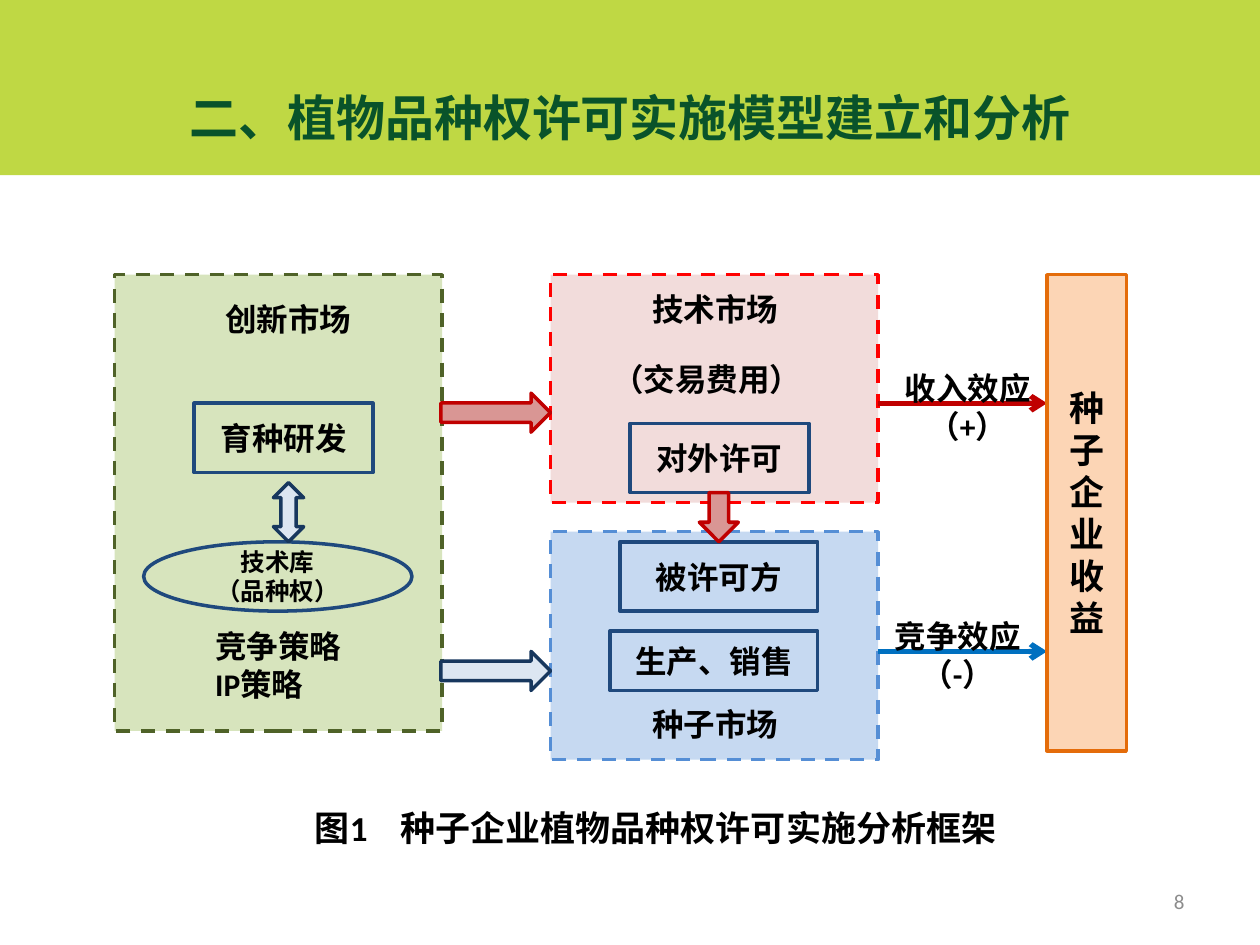
from lxml import etree
from pptx import Presentation
from pptx import util as u
from pptx.dml.color import RGBColor
from pptx.enum import dml, shapes, text
from pptx.oxml import ns

FONT = "Calibri"
LIME = RGBColor(0xBF, 0xD8, 0x44)
TITLE_GREEN = RGBColor(0x09, 0x53, 0x2A)
BLACK = RGBColor(0, 0, 0)
GREY = RGBColor(0x8C, 0x8C, 0x8C)
NAVY = RGBColor(0x1F, 0x49, 0x7D)
RED = RGBColor(0xC0, 0x00, 0x00)
BLUE = RGBColor(0x00, 0x70, 0xC0)
PALE_GREEN, OLIVE = RGBColor(0xD7, 0xE4, 0xBD), RGBColor(0x4F, 0x62, 0x28)
PALE_RED, BRIGHT_RED = RGBColor(0xF2, 0xDC, 0xDB), RGBColor(0xFF, 0, 0)
PALE_BLUE, MID_BLUE = RGBColor(0xC6, 0xD9, 0xF1), RGBColor(0x55, 0x8E, 0xD5)
PEACH, ORANGE = RGBColor(0xFC, 0xD5, 0xB5), RGBColor(0xE4, 0x6C, 0x0A)
ROSE = RGBColor(0xD9, 0x96, 0x94)
ICE, DARK_NAVY = RGBColor(0xDC, 0xE6, 0xF2), RGBColor(0x17, 0x37, 0x5E)

GEOMETRY = shapes.MSO_SHAPE
LEFT, CENTER, RIGHT = text.PP_ALIGN.LEFT, text.PP_ALIGN.CENTER, text.PP_ALIGN.RIGHT
MIDDLE = text.MSO_ANCHOR.MIDDLE

# Shared positions in inches
MARKET_TOP, MARKET_WIDTH = 2.18, 2.6
INNOVATION_LEFT, MARKET_LEFT, INCOME_LEFT = 0.91, 4.37, 8.31
MARKET_RIGHT = MARKET_LEFT + MARKET_WIDTH


def inches(box):
    return [u.Inches(value) for value in box]


def write(frame, lines, size, color=BLACK, bold=True, align=LEFT):
    frame.word_wrap = True
    for index, line in enumerate(lines):
        paragraph = frame.paragraphs[0] if index == 0 else frame.add_paragraph()
        paragraph.alignment = align
        run = paragraph.add_run()
        run.text = line
        run.font.name = FONT
        run.font.size = u.Pt(size)
        run.font.bold = bold
        run.font.color.rgb = color


def add_figure(slide, geometry, box, fill=None, line=None, dashed=False):
    shape = slide.shapes.add_shape(geometry, *inches(box))
    shape.shadow.inherit = False
    if fill is None:
        shape.fill.background()
    else:
        shape.fill.solid()
        shape.fill.fore_color.rgb = fill
    if line is None:
        shape.line.fill.background()
    else:
        shape.line.color.rgb = line
        shape.line.width = u.Pt(2)
    if dashed:
        shape.line.dash_style = dml.MSO_LINE.DASH
    return shape


def add_node(slide, geometry, box, lines, size=18, fill=None, line=NAVY):
    shape = add_figure(slide, geometry, box, fill, line)
    shape.text_frame.vertical_anchor = MIDDLE
    write(shape.text_frame, lines, size, align=CENTER)


def add_label(slide, box, lines, size=18, **style):
    label = slide.shapes.add_textbox(*inches(box))
    write(label.text_frame, lines, size, **style)
    return label


def add_effect_arrow(slide, y, color):
    arrow = slide.shapes.add_connector(
        shapes.MSO_CONNECTOR.STRAIGHT, *inches((MARKET_RIGHT, y, INCOME_LEFT, y)))
    arrow.line.color.rgb = color
    arrow.line.width = u.Pt(3)
    etree.SubElement(arrow.line._get_or_add_ln(), ns.qn("a:tailEnd"), type="arrow")
    etree.SubElement(arrow._element.spPr, ns.qn("a:effectLst"))


def set_title(slide, words):
    title = slide.shapes.title
    title.left, title.top, title.width, title.height = inches((0.5, 0.3, 9, 1.25))
    title.text_frame.vertical_anchor = MIDDLE
    write(title.text_frame, [words], 28, TITLE_GREEN, align=CENTER)
    # The title lies in front of the header band
    slide.shapes._spTree.append(title._element)


def add_caption(slide):
    caption = add_label(slide, (2.4, 6.35, 5.67, 0.44),
                        ["图1\t种子企业植物品种权许可实施分析框架"], 20)
    properties = caption.text_frame.paragraphs[0]._p.get_or_add_pPr()
    tabs = etree.SubElement(properties, ns.qn("a:tabLst"))
    etree.SubElement(tabs, ns.qn("a:tab"), pos=str(u.Inches(0.68)), algn="l")


def main():
    presentation = Presentation()
    presentation.slide_width, presentation.slide_height = u.Inches(10), u.Inches(7.5)
    slide = presentation.slides.add_slide(presentation.slide_layouts[5])

    # Header
    add_figure(slide, GEOMETRY.RECTANGLE, (0, 0, 10, 1.39), LIME)
    set_title(slide, "二、植物品种权许可实施模型建立和分析")

    # Market areas
    for left, top, height, fill, line in (
            (MARKET_LEFT, 4.22, 1.81, PALE_BLUE, MID_BLUE),
            (MARKET_LEFT, MARKET_TOP, 1.81, PALE_RED, BRIGHT_RED),
            (INNOVATION_LEFT, MARKET_TOP, 3.62, PALE_GREEN, OLIVE)):
        add_figure(slide, GEOMETRY.RECTANGLE, (left, top, MARKET_WIDTH, height),
                   fill, line, dashed=True)

    # Activities within the markets
    for box, words in (
            ((1.54, 3.2, 1.42, 0.55), "育种研发"),
            ((5, 3.36, 1.42, 0.55), "对外许可"),
            ((4.92, 4.3, 1.57, 0.55), "被许可方"),
            ((4.84, 5.01, 1.65, 0.47), "生产、销售")):
        add_node(slide, GEOMETRY.RECTANGLE, box, [words])
    add_node(slide, GEOMETRY.OVAL, (1.14, 4.3, 2.13, 0.55), ["技术库", "（品种权）"], 14)

    # Block arrows
    for geometry, box, fill, line in (
            (GEOMETRY.RIGHT_ARROW, (3.5, 5.17, 0.87, 0.31), ICE, DARK_NAVY),
            (GEOMETRY.RIGHT_ARROW, (3.5, 3.12, 0.87, 0.31), ROSE, RED),
            (GEOMETRY.UP_DOWN_ARROW, (2.17, 3.83, 0.24, 0.47), ICE, DARK_NAVY),
            (GEOMETRY.DOWN_ARROW, (5.55, 3.91, 0.31, 0.39), ROSE, RED)):
        add_figure(slide, geometry, box, fill, line)

    # Market labels
    for box, lines in (
            ((1.69, 2.33, 1.34, 0.4), ["创新市场"]),
            ((1.61, 4.93, 1.34, 0.71), ["竞争策略", "IP策略"]),
            ((5.08, 2.25, 1.42, 0.4), ["技术市场"]),
            ((4.76, 2.81, 1.81, 0.4), ["（交易费用）"]),
            ((5.08, 5.55, 1.42, 0.4), ["种子市场"])):
        add_label(slide, box, lines)

    # Effects on company income
    add_effect_arrow(slide, 3.2, RED)
    add_effect_arrow(slide, 5.17, BLUE)
    add_node(slide, GEOMETRY.RECTANGLE, (INCOME_LEFT, MARKET_TOP, 0.63, 3.78),
             ["种子企业收益"], 20, PEACH, ORANGE)
    add_label(slide, (6.97, 2.88, 1.42, 0.71), ["收入效应", "（+）"], align=CENTER)
    add_label(slide, (6.89, 4.85, 1.42, 0.71), ["竞争效应", "（-）"], align=CENTER)

    # Caption and page number
    add_caption(slide)
    number = add_label(slide, (7.17, 6.95, 2.33, 0.4), ["8"], 12,
                       color=GREY, bold=False, align=RIGHT)
    number.text_frame.vertical_anchor = MIDDLE

    presentation.save("out.pptx")


if __name__ == "__main__":
    main()
